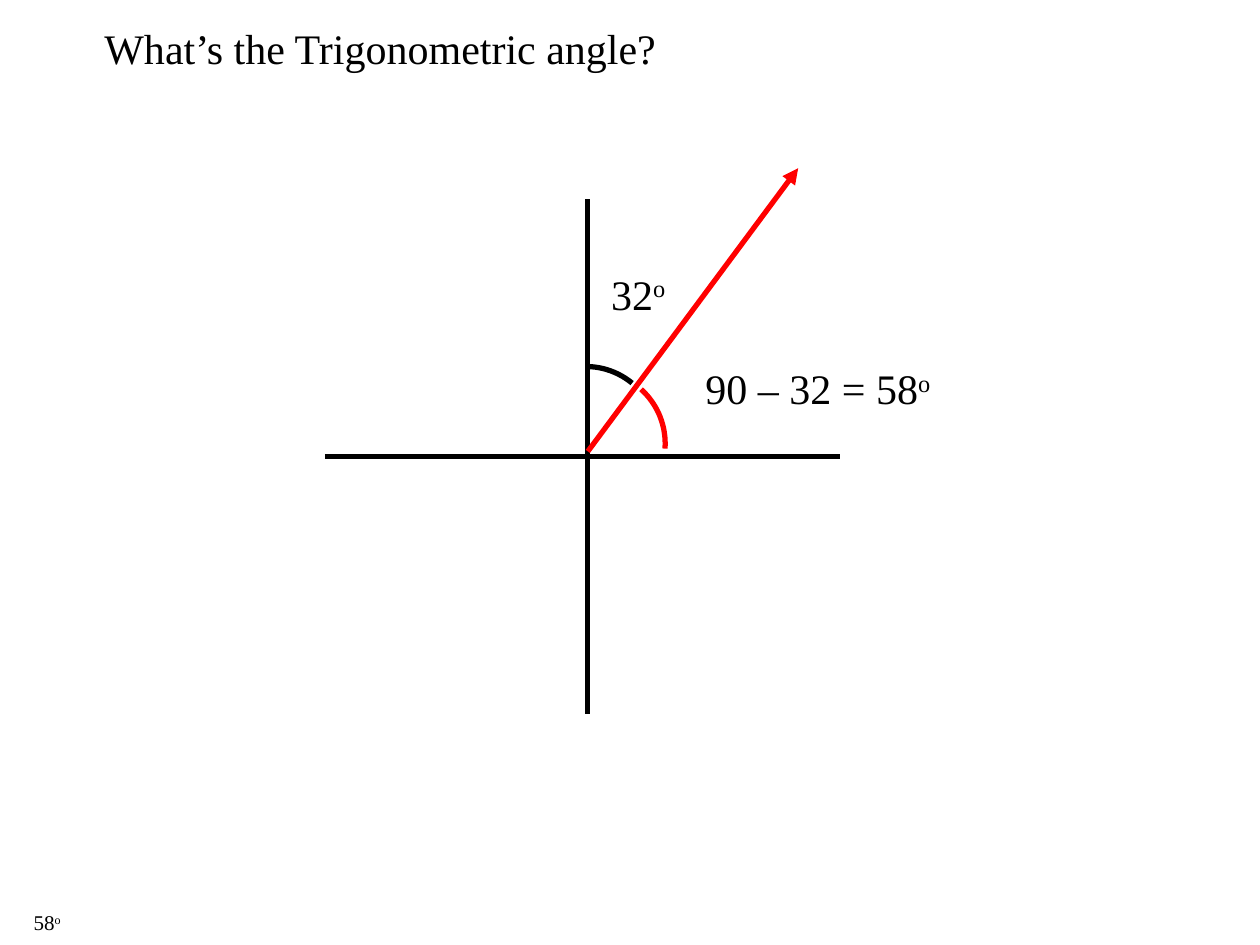
"""Build a slide that finds a trigonometric angle from its complement."""
from math import cos, radians, sin

from lxml.etree import SubElement
from pptx import Presentation
from pptx.dml.color import RGBColor
from pptx.enum.shapes import MSO_CONNECTOR as Connector
from pptx.enum.text import MSO_ANCHOR as Anchor, MSO_AUTO_SIZE as AutoSize, PP_ALIGN as Align
from pptx.oxml.ns import qn
from pptx.util import Cm, Pt

FONT = "Times New Roman"
COLORS = {"ink": "000000", "ray": "FF0000"}
STROKE = 3
ARC_RADIUS = 1.47
ARC_STEPS = 24

TITLE = ("What’s the Trigonometric angle?", (1.85, 0.33, 11.71, 1.27))
LABELS = [
    ("58", 12, (0.43, 18.21, 1.07, 0.76)),
    ("32", 24, (12.07, 5.28, 1.65, 1.27)),
    ("90 – 32 = 58", 24, (13.97, 7.19, 5.08, 1.27)),
]
LINES = [
    ((6.55, 9.2), (16.93, 9.2), "ink", False),
    ((11.85, 4.02), (11.85, 14.4), "ink", False),
    ((11.85, 9.1), (16.09, 3.39), "ray", True),
]
ARCS = [
    ((11.81, 8.86), 87, 50.6, "ink"),
    ((11.94, 8.94), 48, -4, "ray"),
]


def color(key):
    return RGBColor.from_string(COLORS[key])


def place(box, bounds):
    box.left, box.top, box.width, box.height = map(Cm, bounds)


def write(box, size, text, degree=False):
    frame = box.text_frame
    frame.word_wrap = False
    frame.auto_size = AutoSize.SHAPE_TO_FIT_TEXT
    frame.vertical_anchor = Anchor.TOP
    paragraph = frame.paragraphs[0]
    paragraph.alignment = Align.LEFT
    for part in [text, "o"] if degree else [text]:
        run = paragraph.add_run()
        run.text = part
        run.font.name = FONT
        run.font.size = Pt(size)
        run.font.color.rgb = color("ink")
    if degree:
        run.font._element.set("baseline", "30000")


def stroke(outline, key):
    outline.line.color.rgb = color(key)
    outline.line.width = Pt(STROKE)


def draw_line(slide, start, end, key, arrow):
    line = slide.shapes.add_connector(Connector.STRAIGHT, *map(Cm, start + end))
    stroke(line, key)
    if arrow:
        SubElement(line.line._get_or_add_ln(), qn("a:tailEnd"), type="triangle")
    SubElement(line._element.spPr, qn("a:effectLst"))


def draw_arc(slide, center, start, end, key):
    angles = [radians(start + (end - start) * i / ARC_STEPS) for i in range(ARC_STEPS + 1)]
    points = [
        (Cm(center[0] + ARC_RADIUS * cos(a)), Cm(center[1] - ARC_RADIUS * sin(a)))
        for a in angles
    ]
    builder = slide.shapes.build_freeform(*points[0])
    builder.add_line_segments(points[1:], close=False)
    arc = builder.convert_to_shape()
    arc.shadow.inherit = False
    arc.fill.background()
    stroke(arc, key)


def main():
    deck = Presentation()
    deck.slide_width, deck.slide_height = Cm(25.4), Cm(19.05)
    slide = deck.slides.add_slide(deck.slide_layouts[5])
    question, bounds = TITLE
    place(slide.shapes.title, bounds)
    write(slide.shapes.title, 24, question)
    for line in LINES:
        draw_line(slide, *line)
    for arc in ARCS:
        draw_arc(slide, *arc)
    for angle, size, bounds in LABELS:
        write(slide.shapes.add_textbox(*map(Cm, bounds)), size, angle, degree=True)
    deck.save("out.pptx")


if __name__ == "__main__":
    main()
